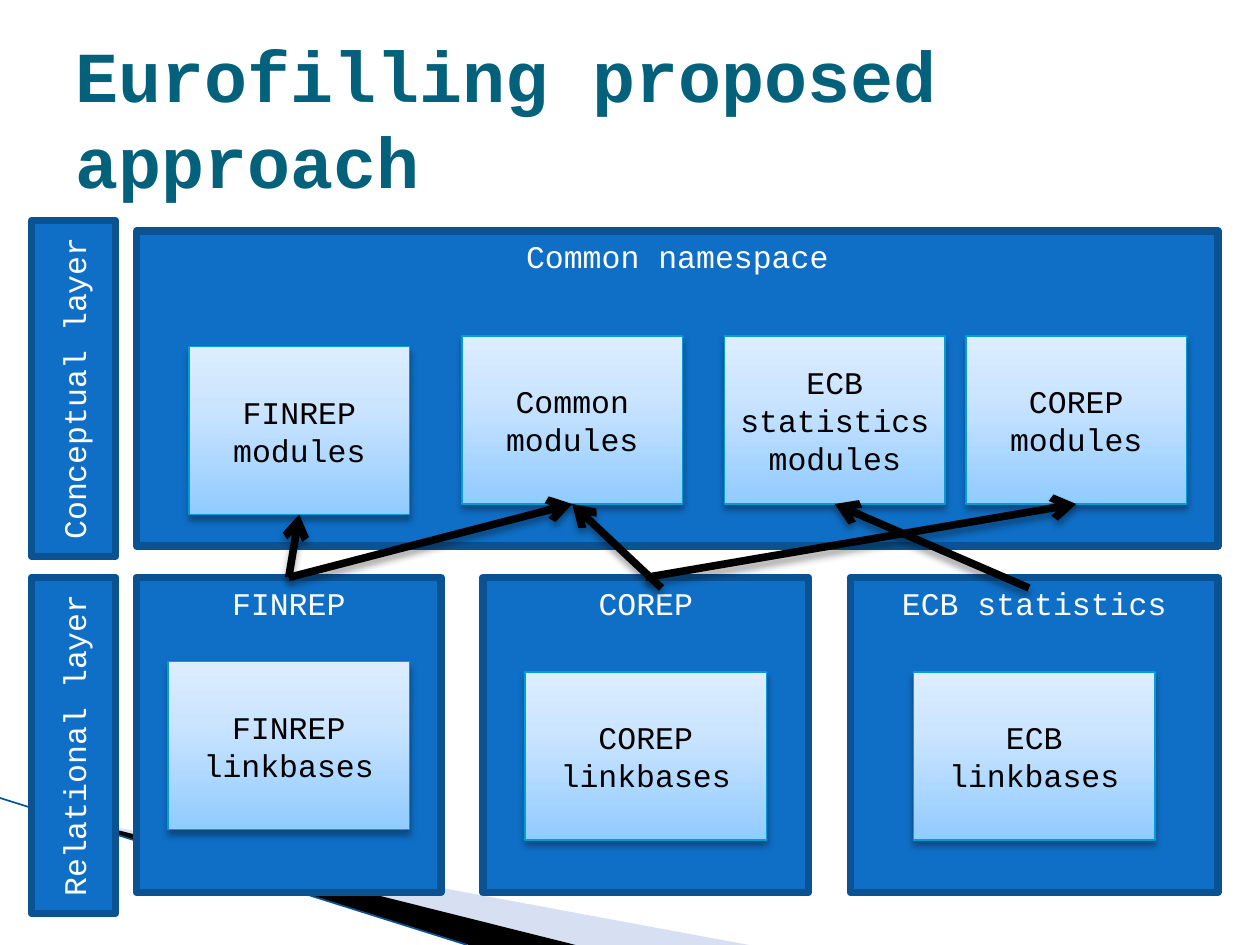
"""Build the slide on the proposed layers, modules and linkbases."""
from pptx import Presentation
from pptx.dml.color import RGBColor
from pptx.enum.shapes import MSO_CONNECTOR as LINK, MSO_SHAPE as SHAPE
from pptx.enum.text import MSO_ANCHOR as ANCHOR, MSO_AUTO_SIZE as SIZE, PP_ALIGN as ALIGN
from pptx.oxml import parse_xml
from pptx.oxml.ns import nsdecls
from pptx.util import Pt

NS = nsdecls("a")
FONT = "Courier New"
GRAD = f"""<a:gradFill {NS} rotWithShape="1"><a:gsLst>
<a:gs pos="0"><a:srgbClr val="91CBFF"/></a:gs>
<a:gs pos="65000"><a:srgbClr val="CCE5FF"/></a:gs>
<a:gs pos="100000"><a:srgbClr val="DCEDFF"/></a:gs>
</a:gsLst><a:lin ang="16200000" scaled="0"/></a:gradFill>"""
SHADE = f"""<a:effectLst {NS}><a:outerShdw blurRad="50800" dist="38100" dir="5400000"
rotWithShape="0"><a:srgbClr val="000000"><a:alpha val="35000"/></a:srgbClr>
</a:outerShdw></a:effectLst>"""
tint = RGBColor.from_string


def write(frame, text, size, hue, bold=False):
    """Add one run to the first paragraph."""
    run = frame.paragraphs[0].add_run()
    run.text = text
    run.font.name, run.font.size, run.font.bold = FONT, Pt(size), bold
    run.font.color.rgb = tint(hue)


def link(start, end, hue, width):
    """Draw a straight line between two points."""
    line = shapes.add_connector(LINK.STRAIGHT, *map(Pt, start + end))
    line.line.color.rgb = tint(hue)
    line.line.width = Pt(width)
    return line


deck = Presentation()
deck.slide_width, deck.slide_height = Pt(720), Pt(540)
slide = deck.slides.add_slide(deck.slide_layouts[5])
shapes = slide.shapes

wedges = [
    ("9DB2E1", [(40, 468.5), (428, 540), (328, 540), (40, 468)]),
    ("000000", [(38, 467), (329, 540), (268, 540), (39, 468)]),
]
for hue, points in wedges:
    path = shapes.build_freeform(*points[0], scale=Pt(1))
    path.add_line_segments(points[1:], close=True)
    wedge = path.convert_to_shape()
    wedge.shadow.inherit = False
    wedge.fill.solid()
    wedge.fill.fore_color.rgb = tint(hue)
    wedge.line.fill.background()
    if hue == "9DB2E1":
        clear = parse_xml(f'<a:alpha {NS} val="40000"/>')
        wedge._element.spPr.find(".//{*}srgbClr").append(clear)
edge = link((0, 456), (267, 540), "0B5292", 0.95)
edge._element.spPr.append(parse_xml(f"<a:effectLst {NS}/>"))

title = shapes.title
title.left, title.top, title.width, title.height = map(Pt, (36, 21.6, 648, 90))
frame = title.text_frame
frame.word_wrap, frame.auto_size = True, SIZE.NONE
frame.vertical_anchor = ANCHOR.MIDDLE
frame.paragraphs[0].alignment = ALIGN.LEFT
write(frame, "Eurofilling proposed approach", 41, "04617B", True)
shapes._spTree.append(title._element)

boxes = [
    ("area", "Common namespace", 78, 132, 618, 180),
    ("area", "FINREP", 78, 330, 174, 180),
    ("area", "COREP", 276, 330, 186, 180),
    ("area", "ECB statistics", 486, 330, 210, 180),
    ("layer", "Conceptual layer", 18, 126, 48, 192),
    ("layer", "Relational layer", 18, 330, 48, 192),
    ("card", "FINREP modules", 108, 198, 126, 96),
    ("card", "Common modules", 264, 192, 126, 96),
    ("card", "ECB statistics modules", 414, 192, 126, 96),
    ("card", "COREP modules", 552, 192, 126, 96),
    ("card", "FINREP linkbases", 96, 378, 138, 96),
    ("card", "COREP linkbases", 300, 384, 138, 96),
    ("card", "ECB linkbases", 522, 384, 138, 96),
]
for kind, text, *place in boxes:
    card = kind == "card"
    box = shapes.add_shape(SHAPE.RECTANGLE, *map(Pt, place))
    box.line.color.rgb = tint("009DD9" if card else "0B5292")
    box.line.width = Pt(0.75 if card else 4.33)
    if card:
        box._element.spPr.insert(2, parse_xml(GRAD))
        box._element.spPr.append(parse_xml(SHADE))
    else:
        box.shadow.inherit = False
        box.fill.solid()
        box.fill.fore_color.rgb = tint("0F6FC6")
    frame = box.text_frame
    frame.word_wrap = True
    frame.vertical_anchor = ANCHOR.TOP if kind == "area" else ANCHOR.MIDDLE
    if kind == "layer":
        frame._txBody.bodyPr.set("vert", "vert270")
    frame.paragraphs[0].alignment = ALIGN.CENTER
    write(frame, text, 18, "000000" if card else "FFFFFF")

arrows = [
    ((165, 330), (171, 294)),
    ((165, 330), (327, 288)),
    ((369, 330), (615, 288)),
    ((378, 336), (327, 288)),
    ((588, 336), (477, 288)),
]
for start, end in arrows:
    arrow = link(start, end, "000000", 4.33)
    arrow.line._get_or_add_ln().append(parse_xml(f'<a:tailEnd {NS} type="arrow"/>'))
    arrow._element.spPr.append(parse_xml(SHADE))

deck.save("out.pptx")
